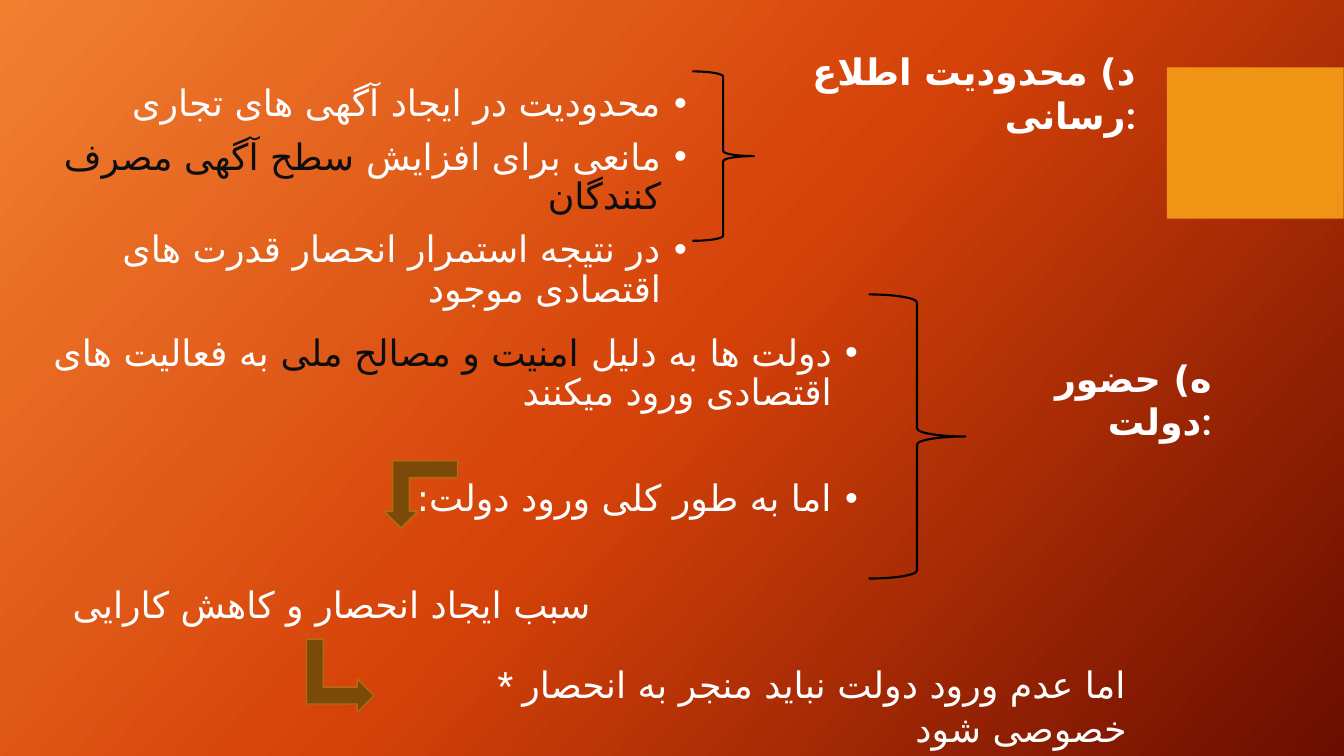
from pptx import Presentation
from pptx import oxml
from pptx import util as u
from pptx.dml.color import RGBColor
from pptx.enum import shapes, text
from pptx.oxml import ns

WHITE, DARK, BLACK = "FFFFFF", "0D0D0D", "000000"
ORANGE, BROWN, BRONZE = "F09415", "7B4A08", "B26D10"
GRADIENT = [(0, "F18031"), (50, "D54209"), (100, "6A0D00")]


def rgb(value):
    return RGBColor.from_string(value)


class Board:
    """Draws styled elements on one slide."""

    font, arabic_font, size = "Roboto", "DejaVu Sans", u.Pt(26)

    def __init__(self, prs):
        self.s = prs.slides.add_slide(prs.slide_layouts[6])

    def background(self, stops, angle):
        gs = "".join(
            f'<a:gs pos="{pos * 1000}"><a:srgbClr val="{c}"/></a:gs>' for pos, c in stops
        )
        bg = oxml.parse_xml(
            f'<p:bg {ns.nsdecls("p", "a")}><p:bgPr><a:gradFill rotWithShape="1">'
            f'<a:gsLst>{gs}</a:gsLst><a:lin ang="{angle * 60000}" scaled="0"/>'
            "</a:gradFill><a:effectLst/></p:bgPr></p:bg>"
        )
        self.s.element.cSld.insert(0, bg)

    def shape(self, kind, box, fill=None, line=None, width=1.0, rotation=0):
        sp = self.s.shapes.add_shape(kind, *map(u.Cm, box))
        sp.shadow.inherit = False
        sp.rotation = rotation
        if fill:
            sp.fill.solid()
            sp.fill.fore_color.rgb = rgb(fill)
        else:
            sp.fill.background()
        if line:
            sp.line.color.rgb = rgb(line)
            sp.line.width = u.Pt(width)
        else:
            sp.line.fill.background()

    def brace(self, box):
        self.shape(shapes.MSO_SHAPE.RIGHT_BRACE, box, line=BLACK, width=1.5)

    def arrow(self, left, top, rotation):
        box = (left, top, 1.85, 1.7)
        self.shape(shapes.MSO_SHAPE.BENT_UP_ARROW, box, BROWN, BRONZE, rotation=rotation)

    def frame(self, box):
        tf = self.s.shapes.add_textbox(*map(u.Cm, box)).text_frame
        tf.word_wrap = True
        return tf

    def style(self, r, color=WHITE, bold=False):
        r.font.name, r.font.size, r.font.bold = self.font, self.size, bold
        r.font.color.rgb = rgb(color)
        cs = oxml.parse_xml(f'<a:cs {ns.nsdecls("a")} typeface="{self.arabic_font}"/>')
        r.font._element.append(cs)

    def label(self, box, words, bold=False):
        tf = self.frame(box)
        tf.auto_size = text.MSO_AUTO_SIZE.SHAPE_TO_FIT_TEXT
        tf.text = words
        p = tf.paragraphs[0]
        p.alignment = text.PP_ALIGN.RIGHT
        self.style(p.runs[0], bold=bold)

    def body(self, box, items):
        tf = self.frame(box)
        for i, (before, indent, runs) in enumerate(items):
            p = tf.paragraphs[0] if i == 0 else tf.add_paragraph()
            pPr = p._p.get_or_add_pPr()
            pPr.set("rtl", "1")
            if indent:
                pPr.set("marL", str(u.Cm(indent)))
                pPr.set("indent", "0")
            else:
                pPr.set("marL", str(u.Cm(0.64)))
                pPr.set("indent", str(u.Cm(-0.64)))
                pPr.append(oxml.parse_xml(
                    f'<a:buFont {ns.nsdecls("a")} typeface="Arial"/>'))
                pPr.append(oxml.parse_xml(f'<a:buChar {ns.nsdecls("a")} char="•"/>'))
            p.alignment = text.PP_ALIGN.RIGHT
            p.line_spacing = 0.9
            p.space_before = u.Pt(before)
            for words, color in runs:
                r = p.add_run()
                r.text = words
                self.style(r, color)


def main():
    prs = Presentation()
    prs.slide_width, prs.slide_height = u.Cm(33.87), u.Cm(19.05)
    board = Board(prs)
    board.background(GRADIENT, 42)
    board.shape(shapes.MSO_SHAPE.RECTANGLE, (29.41, 1.7, 4.45, 3.81), ORANGE)

    board.label((19, 1.12, 9.88, 1.37), "د) محدودیت اطلاع رسانی:", bold=True)
    board.body((1.3, 2.03, 16.26, 4.27), [
        (0, 0, [("محدودیت در ایجاد آگهی های تجاری", WHITE)]),
        (10, 0, [("مانعی برای افزایش ", WHITE), ("سطح آگهی مصرف کنندگان", DARK)]),
        (10, 0, [("در نتیجه استمرار انحصار قدرت های اقتصادی موجود", WHITE)]),
    ])
    board.brace((17.45, 1.8, 1.55, 4.27))

    board.label((24.74, 8.84, 6.05, 1.37), "ه) حضور دولت:", bold=True)
    board.body((-0.69, 8.31, 22.56, 6.63), [
        (0, 0, [
            ("دولت ها به دلیل ", WHITE),
            ("امنیت و مصالح ملی ", DARK),
            ("به فعالیت های اقتصادی ورود میکنند", WHITE),
        ]),
        (48, 0, [("اما به طور کلی ورود دولت:", WHITE)]),
        (48, 6.71, [("سبب ایجاد انحصار و کاهش کارایی", WHITE)]),
    ])
    board.arrow(9.68, 11.61, 180)
    board.label((11.35, 16.56, 17.3, 1.37),
                "* اما عدم ورود دولت نباید منجر به انحصار خصوصی شود")
    board.brace((21.89, 7.42, 2.44, 7.16))
    board.arrow(7.65, 16.18, 90)
    prs.save("out.pptx")


if __name__ == "__main__":
    main()
